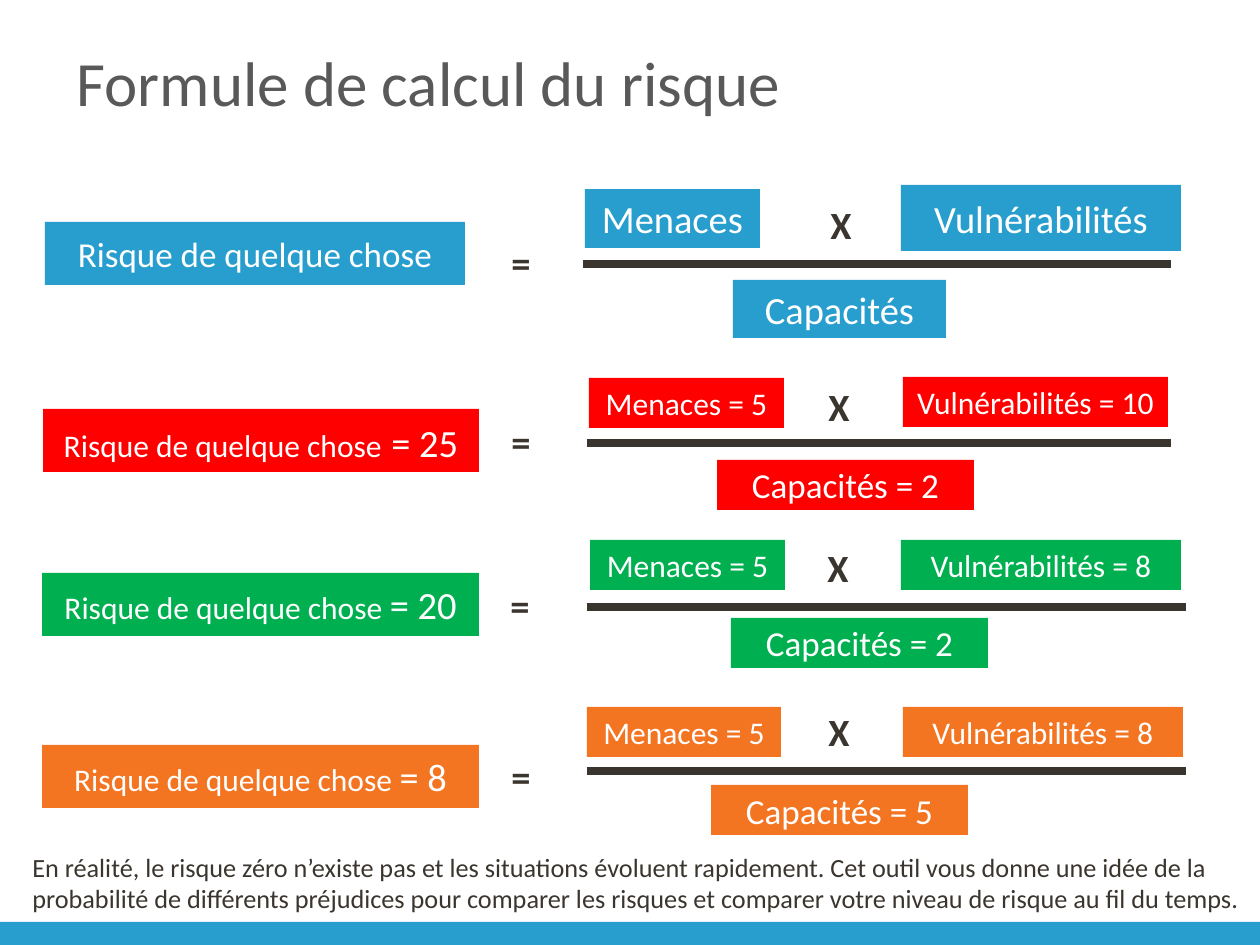
"""Build the slide that shows the risk formula and three worked cases."""
import pptx
import pptx.util
import pptx.dml.color
import pptx.enum.shapes
import pptx.enum.text
import pptx.oxml

THEME = {
    "font": "Calibri",
    "blue": "279ECE", "red": "FF0000", "green": "00B050", "orange": "F37421",
    "title": "595959", "ink": "3B352F", "line": "3A342E", "white": "FFFFFF",
    "head": 36, "gap": 24, "big": 22, "mid": 20, "small": 18, "note": 15, "rule": 4.5,
}

TITLE = "Formule de calcul du risque"
NOTE = ("En réalité, le risque zéro n’existe pas et les situations évoluent rapidement. "
        "Cet outil vous donne une idée de la probabilité de différents préjudices pour "
        "comparer les risques et comparer votre niveau de risque au fil du temps.")
RISK = "Risque de quelque chose"

ROWS = [
    {"tone": "blue", "rule": (583, 1171, 264), "times": (818, 195), "equal": (499, 233),
     "boxes": [
         ((45, 222, 420, 63), [(RISK, "mid")]),
         ((585, 189, 175, 59), [("Menaces", "big")]),
         ((901, 185, 280, 66), [("Vulnérabilités", "big")]),
         ((733, 280, 213, 58), [("Capacités", "big")])]},
    {"tone": "red", "rule": (587, 1171, 443), "times": (816, 377), "equal": (499, 412),
     "boxes": [
         ((43, 409, 436, 63), [(RISK, "small"), (" ", "gap"), ("= 25", "big")]),
         ((589, 378, 195, 50), [("Menaces = 5", "small")]),
         ((903, 377, 265, 50), [("Vulnérabilités = 10", "small")]),
         ((717, 460, 257, 50), [("Capacités = 2", "mid")])]},
    {"tone": "green", "rule": (587, 1186, 607), "times": (815, 538), "equal": (498, 576),
     "boxes": [
         ((42, 573, 437, 63), [(RISK + " ", "small"), ("= 20", "big")]),
         ((590, 540, 195, 50), [("Menaces = 5", "small")]),
         ((901, 540, 280, 50), [("Vulnérabilités = 8", "small")]),
         ((731, 618, 257, 50), [("Capacités = 2", "mid")])]},
    {"tone": "orange", "rule": (587, 1186, 771), "times": (816, 702), "equal": (499, 747),
     "boxes": [
         ((42, 745, 437, 63), [(RISK + " ", "small"), ("= 8", "big")]),
         ((587, 707, 194, 50), [("Menaces = 5", "small")]),
         ((903, 707, 280, 50), [("Vulnérabilités = 8", "small")]),
         ((711, 785, 257, 50), [("Capacités = 5", "mid")])]},
]

ALIGN = pptx.enum.text.PP_ALIGN
ANCHOR = pptx.enum.text.MSO_ANCHOR
RECT = pptx.enum.shapes.MSO_SHAPE.RECTANGLE
STRAIGHT = pptx.enum.shapes.MSO_CONNECTOR.STRAIGHT


def px(*sides):
    return [round(side * 914400 / 126) for side in sides]


def tint(name):
    return pptx.dml.color.RGBColor.from_string(THEME[name])


def write(shape, runs, tone, align=ALIGN.LEFT, anchor=ANCHOR.TOP, bold=False):
    frame = shape.text_frame
    frame.word_wrap = True
    frame.vertical_anchor = anchor
    para = frame.paragraphs[0]
    para.alignment = align
    for text, size in runs:
        run = para.add_run()
        run.text = text
        run.font.name = THEME["font"]
        run.font.size = pptx.util.Pt(THEME[size])
        run.font.bold = bold
        run.font.color.rgb = tint(tone)


def block(slide, area, tone):
    shape = slide.shapes.add_shape(RECT, *px(*area))
    shape.shadow.inherit = False
    shape.fill.solid()
    shape.fill.fore_color.rgb = tint(tone)
    shape.line.fill.background()
    return shape


def label(slide, area, text, size, bold=False):
    box = slide.shapes.add_textbox(*px(*area))
    write(box, [(text, size)], "ink", bold=bold)
    box.text_frame.auto_size = pptx.enum.text.MSO_AUTO_SIZE.SHAPE_TO_FIT_TEXT


def rule(slide, start, end, top):
    line = slide.shapes.add_connector(STRAIGHT, *px(start, top, end, top))
    line.line.color.rgb = tint("line")
    line.line.width = pptx.util.Pt(THEME["rule"])
    props = line._element.spPr
    props.append(pptx.oxml.parse_xml(
        '<a:effectLst xmlns:a="http://schemas.openxmlformats.org/drawingml/2006/main"/>'))


def main():
    deck = pptx.Presentation()
    deck.slide_width, deck.slide_height = px(1260, 945)
    slide = deck.slides.add_slide(deck.slide_layouts[5])
    block(slide, (0, 922, 1260, 23), "blue")
    title = slide.shapes.title
    title.left, title.top, title.width, title.height = px(64, 14, 1133, 134)
    write(title, [(TITLE, "head")], "title", anchor=ANCHOR.MIDDLE)
    for row in ROWS:
        for area, runs in row["boxes"]:
            shape = block(slide, area, row["tone"])
            write(shape, runs, "white", ALIGN.CENTER, ANCHOR.MIDDLE)
        rule(slide, *row["rule"])
        label(slide, (*row["times"], 55, 59), "X", "big", True)
        label(slide, (*row["equal"], 57, 59), "=", "big", True)
    label(slide, (20, 845, 1237, 77), NOTE, "note")
    deck.save("out.pptx")


if __name__ == "__main__":
    main()
